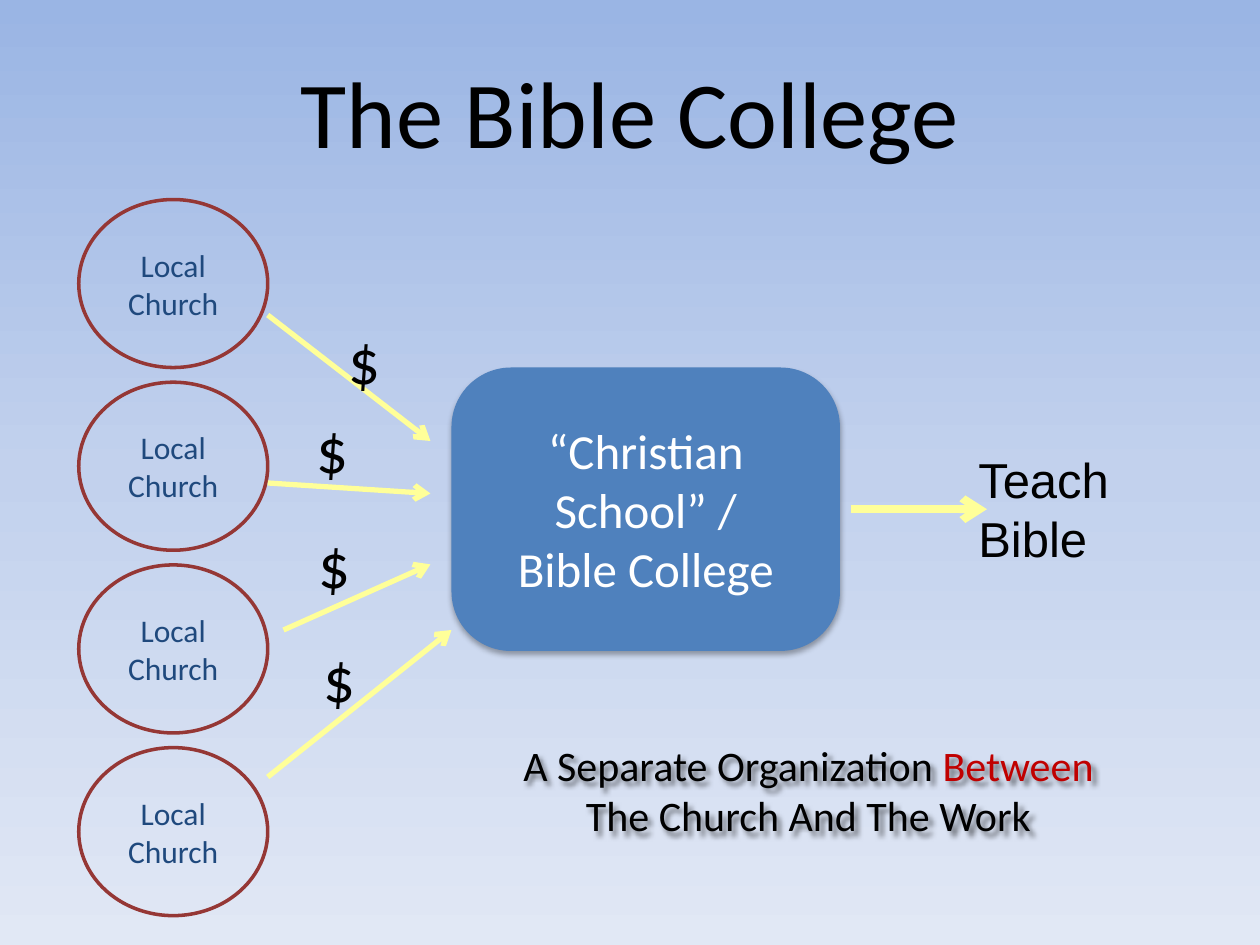
"""Build the slide on the Bible college and its local churches."""
import copy
import pptx
import pptx.util
import pptx.dml.color
import pptx.enum.shapes
import pptx.enum.text
import pptx.oxml
import pptx.oxml.ns
from lxml import etree

Pt = pptx.util.Pt
RGB = pptx.dml.color.RGBColor
KIND = pptx.enum.shapes.MSO_SHAPE
ALIGN = pptx.enum.text.PP_ALIGN
ANCHOR = pptx.enum.text.MSO_ANCHOR
SIZING = pptx.enum.text.MSO_AUTO_SIZE
qn = pptx.oxml.ns.qn

BLACK = RGB(0, 0, 0)
WHITE = RGB(255, 255, 255)
BLUE = RGB(0x4F, 0x81, 0xBD)
NAVY = RGB(0x1F, 0x49, 0x7D)
MAROON = RGB(0x95, 0x37, 0x35)
RED = RGB(0xC0, 0, 0)
YELLOW = RGB(0xFF, 0xFF, 0x99)
SKY = (RGB(0x9A, 0xB5, 0xE4), RGB(0xC2, 0xD1, 0xED), RGB(0xE1, 0xE8, 0xF5))


class Board:
    def __init__(self, slide, font="Calibri"):
        self.slide = slide
        self.font = font

    def sky(self, tones):
        fill = self.slide.background.fill
        fill.gradient()
        fill.gradient_angle = 270
        stops = self.slide.element.find(".//" + qn("a:gsLst"))
        while len(stops) < len(tones):
            stops.append(copy.deepcopy(stops[-1]))
        for i, (stop, tone) in enumerate(zip(fill.gradient_stops, tones)):
            stop.color.rgb = tone
            stop.position = i / (len(tones) - 1)

    def letter(self, shape, text, size, color, align, font=None):
        frame = shape.text_frame
        frame.text = text
        frame.word_wrap = True
        for para in frame.paragraphs:
            para.alignment = align
            for run in para.runs:
                run.font.size = Pt(size)
                run.font.name = font or self.font
                run.font.color.rgb = color
        return frame

    def title(self, text, box, size):
        shape = self.slide.shapes.title
        shape.left, shape.top, shape.width, shape.height = map(Pt, box)
        frame = self.letter(shape, text, size, BLACK, ALIGN.CENTER)
        frame.auto_size = SIZING.NONE
        frame.vertical_anchor = ANCHOR.TOP
        frame.margin_top = Pt(7)

    def shape(self, kind, box, text, size, color, fill=None, line=None):
        shape = self.slide.shapes.add_shape(kind, *map(Pt, box))
        shape.shadow.inherit = False
        if fill:
            shape.fill.solid()
            shape.fill.fore_color.rgb = fill
        else:
            shape.fill.background()
        if line:
            shape.line.color.rgb = line
            shape.line.width = Pt(2)
        else:
            shape.line.fill.background()
        frame = self.letter(shape, text, size, color, ALIGN.CENTER)
        frame.vertical_anchor = ANCHOR.MIDDLE
        return shape

    def label(self, box, text, size, align=ALIGN.LEFT, font=None):
        shape = self.slide.shapes.add_textbox(*map(Pt, box))
        self.letter(shape, text, size, BLACK, align, font)
        return shape

    def arrow(self, start, end, width=3):
        line = self.slide.shapes.add_connector(
            pptx.enum.shapes.MSO_CONNECTOR.STRAIGHT, *map(Pt, start + end))
        line.line.color.rgb = YELLOW
        line.line.width = Pt(width)
        etree.SubElement(line.element.find(".//" + qn("a:ln")),
                         qn("a:tailEnd"), type="arrow")
        etree.SubElement(line.element.spPr, qn("a:effectLst"))

    def shade(self, shape, alpha, blur, dist, angle):
        shape.shadow.inherit = False
        glow = etree.SubElement(
            shape.element.spPr.find(qn("a:effectLst")), qn("a:outerShdw"),
            blurRad=str(Pt(blur)), dist=str(Pt(dist)),
            dir=str(angle * 60000), rotWithShape="0")
        tone = etree.SubElement(glow, qn("a:srgbClr"), val="000000")
        etree.SubElement(tone, qn("a:alpha"), val=str(alpha * 1000))


def main():
    deck = pptx.Presentation()
    deck.slide_width, deck.slide_height = Pt(720), Pt(540)
    board = Board(deck.slides.add_slide(deck.slide_layouts[5]))
    board.sky(SKY)
    board.title("The Bible College", (54, 24, 612, 54), 54)

    school = board.shape(KIND.ROUNDED_RECTANGLE, (258, 210, 222, 162),
                         "“Christian\nSchool” /\nBible College", 28, WHITE,
                         fill=BLUE)
    school.adjustments[0] = 0.21
    board.shade(school, 32, 3.5, 2.2, 90)

    for i in range(4):
        board.shape(KIND.OVAL, (45, 114 + 104.4 * i, 108, 96),
                    "Local\nChurch", 18, NAVY, line=MAROON)

    for start, end in (((153, 180), (246, 252)), ((153, 276), (246, 282)),
                       ((162, 360), (246, 322.5)), ((153, 444), (258, 360))):
        board.arrow(start, end)
    for left, top in ((192, 180), (174, 231), (175, 297), (178, 362)):
        board.label((left, top, 18, 51), "$", 36)

    board.arrow((486, 291), (564, 291), 4.5)
    board.label((552, 253.5, 144, 75.6), "Teach\nBible", 28, font="Arial")

    note = board.label((279, 419, 366, 65.5),
                       "A Separate Organization \nThe Church And The Work",
                       24, ALIGN.CENTER)
    first = note.text_frame.paragraphs[0]
    word = first.add_run()
    word.text = "Between"
    word.font.size = Pt(24)
    word.font.name = board.font
    word.font.color.rgb = RED
    board.shade(note, 50, 3, 3, 45)
    deck.save("out.pptx")


if __name__ == "__main__":
    main()
